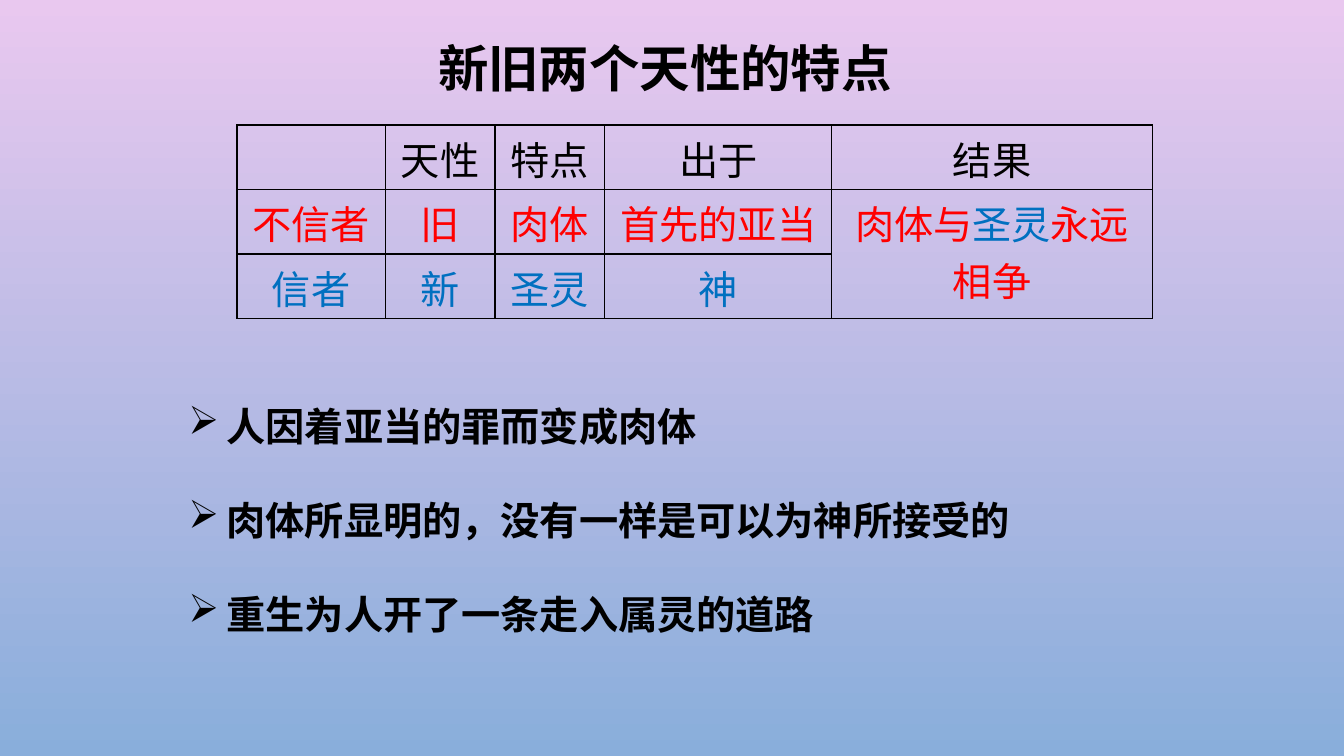
from dataclasses import dataclass

from lxml.etree import SubElement
from pptx import Presentation
from pptx.dml.color import RGBColor as Color
from pptx.enum.text import MSO_ANCHOR as Anchor, MSO_AUTO_SIZE as AutoSize, PP_ALIGN as Align
from pptx.oxml.ns import qn
from pptx.util import Inches, Pt


@dataclass(frozen=True)
class Theme:
    font: str = "Calibri"
    title_size: int = 36
    body_size: int = 28
    border_width: int = 1
    ink: str = "000000"
    old: str = "FF0000"
    new: str = "0070C0"
    sky_top: str = "E9C8EF"
    sky_bottom: str = "89AEDB"


class SlideBuilder:
    def __init__(self, slide, theme):
        self.slide = slide
        self.theme = theme

    def background(self):
        fill = self.slide.background.fill
        fill.gradient()
        fill.gradient_angle = 270
        for stop, color in zip(fill.gradient_stops, (self.theme.sky_top, self.theme.sky_bottom)):
            stop.color.rgb = Color.from_string(color)

    def style(self, font, size, color, bold=False):
        font.name = self.theme.font
        font.size = Pt(size)
        font.bold = bold
        font.color.rgb = Color.from_string(color)

    def text_box(self, left, top, width, height):
        shape = self.slide.shapes.add_textbox(Inches(left), Inches(top), Inches(width), Inches(height))
        shape.text_frame.word_wrap = True
        return shape.text_frame

    def title(self, text, *place):
        frame = self.text_box(*place)
        frame.vertical_anchor = Anchor.MIDDLE
        paragraph = frame.paragraphs[0]
        paragraph.text = text
        paragraph.alignment = Align.CENTER
        paragraph.line_spacing = 0.9
        self.style(paragraph.font, self.theme.title_size, self.theme.ink, bold=True)

    def bullets(self, lines, *place):
        frame = self.text_box(*place)
        frame.auto_size = AutoSize.SHAPE_TO_FIT_TEXT
        frame.text = "\n".join(lines)
        indent = Inches(0.38)
        for paragraph in frame.paragraphs:
            properties = paragraph._p.get_or_add_pPr()
            properties.set("marL", str(indent))
            properties.set("indent", str(-indent))
            SubElement(properties, qn("a:buChar"), char="➢")
            paragraph.line_spacing = 2.0
            self.style(paragraph.font, self.theme.body_size, self.theme.ink, bold=True)

    def borders(self, cell):
        properties = cell._tc.get_or_add_tcPr()
        for position, side in enumerate(("lnL", "lnR", "lnT", "lnB")):
            line = properties.makeelement(qn(f"a:{side}"), {"w": str(Pt(self.theme.border_width))})
            properties.insert(position, line)
            fill = SubElement(line, qn("a:solidFill"))
            SubElement(fill, qn("a:srgbClr"), val=self.theme.ink)

    def cell_text(self, cell, parts, color):
        paragraph = cell.text_frame.paragraphs[0]
        paragraph.alignment = Align.CENTER
        self.style(paragraph.font, self.theme.body_size, color)
        for text, part_color in parts:
            run = paragraph.add_run()
            run.text = text
            if part_color != color:
                run.font.color.rgb = Color.from_string(part_color)

    def table(self, rows, row_colors, widths, row_height, left, top):
        table = self.slide.shapes.add_table(
            len(rows), len(widths), Inches(left), Inches(top),
            Inches(sum(widths)), Inches(row_height * len(rows))).table
        table.first_row = False
        table.horz_banding = False
        for column, width in zip(table.columns, widths):
            column.width = Inches(width)
        for row, texts, color in zip(table.rows, rows, row_colors):
            row.height = Inches(row_height)
            for cell, text in zip(row.cells, texts):
                cell.fill.background()
                self.borders(cell)
                parts = [(text, color)] if isinstance(text, str) else text
                self.cell_text(cell, parts, color)
        return table


def main():
    presentation = Presentation()
    presentation.slide_width = Inches(13.33)
    presentation.slide_height = Inches(7.5)
    theme = Theme()
    builder = SlideBuilder(presentation.slides.add_slide(presentation.slide_layouts[6]), theme)
    builder.background()
    builder.title("新旧两个天性的特点", 0.93, 0, 11.33, 1.42)

    conflict = [("肉体与", theme.old), ("圣灵", theme.new), ("永远相争", theme.old)]
    rows = [
        ["", "天性", "特点", "出于", "结果"],
        ["不信者", "旧", "肉体", "首先的亚当", conflict],
        ["信者", "新", "圣灵", "神", ""],
    ]
    table = builder.table(rows, (theme.ink, theme.old, theme.new),
                          (1.47, 1.09, 1.09, 2.25, 3.18), 0.64, 2.35, 1.24)
    table.cell(1, 4).merge(table.cell(2, 4))

    builder.bullets([
        "人因着亚当的罪而变成肉体",
        "肉体所显明的，没有一样是可以为神所接受的",
        "重生为人开了一条走入属灵的道路",
    ], 1.77, 3.47, 9.79, 2.79)
    presentation.save("out.pptx")


if __name__ == "__main__":
    main()
